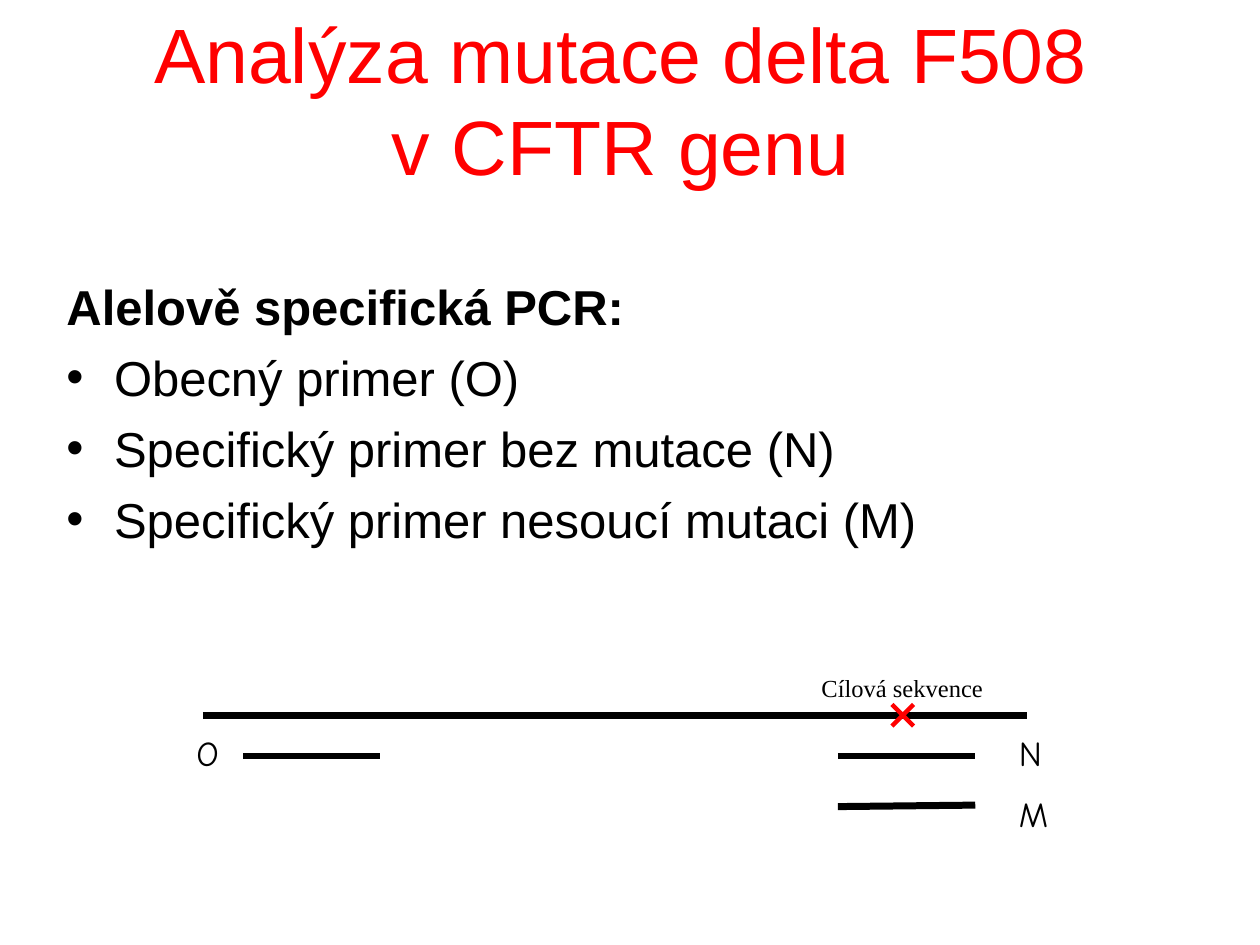
from lxml.etree import SubElement
from pptx import Presentation
from pptx.dml.color import RGBColor
from pptx.enum.shapes import MSO_CONNECTOR as Connector, MSO_SHAPE as Shape
from pptx.enum.text import MSO_ANCHOR as Anchor, MSO_AUTO_SIZE as AutoSize, PP_ALIGN as Align
from pptx.oxml.ns import qn
from pptx.util import Cm, Pt

BLACK = RGBColor(0, 0, 0)
RED = RGBColor(255, 0, 0)
MAIN_FONT = "Arial"
PRIMER_FONT = "Comic Neue"
LABEL_FONT = "Times New Roman"


class SlideBuilder:
    def __init__(self, page):
        self.page = page
        self.line_width = Pt(4)
        self.indent = Cm(0.96)
        self.paragraph_gap = Pt(7)

    def text_box(self, left, top, width, height, wrap=True):
        box = self.page.shapes.add_textbox(Cm(left), Cm(top), Cm(width), Cm(height))
        box.text_frame.word_wrap = wrap
        return box.text_frame

    def run(self, para, text, size, font=MAIN_FONT, color=BLACK, bold=False):
        span = para.add_run()
        span.text = text
        span.font.size = Pt(size)
        span.font.name = font
        span.font.bold = bold
        span.font.color.rgb = color

    def title(self, lines, *place):
        frame = self.text_box(*place)
        frame.vertical_anchor = Anchor.MIDDLE
        para = frame.paragraphs[0]
        para.alignment = Align.CENTER
        for index, line in enumerate(lines):
            if index:
                para.add_line_break()
            self.run(para, line, 44, color=RED)

    def bullet(self, para):
        properties = para._p.get_or_add_pPr()
        properties.set("marL", str(self.indent))
        properties.set("indent", str(-self.indent))
        SubElement(properties, qn("a:buFont")).set("typeface", MAIN_FONT)
        SubElement(properties, qn("a:buChar")).set("char", "•")

    def body(self, heading, items, *place):
        frame = self.text_box(*place)
        para = frame.paragraphs[0]
        para.space_before = self.paragraph_gap
        self.run(para, heading, 28, bold=True)
        for item in items:
            para = frame.add_paragraph()
            para.space_before = self.paragraph_gap
            self.bullet(para)
            self.run(para, item, 28)

    def label(self, text, size, font, *place, wrap=False):
        frame = self.text_box(*place, wrap=wrap)
        frame.auto_size = AutoSize.SHAPE_TO_FIT_TEXT
        self.run(frame.paragraphs[0], text, size, font)

    def strand(self, start, end, top, end_top=None):
        if end_top is None:
            end_top = top
        line = self.page.shapes.add_connector(
            Connector.STRAIGHT, Cm(start), Cm(top), Cm(end), Cm(end_top))
        line.line.color.rgb = BLACK
        line.line.width = self.line_width
        SubElement(line._element.spPr, qn("a:effectLst"))

    def cross(self, left, top, size):
        mark = self.page.shapes.add_shape(
            Shape.MATH_MULTIPLY, Cm(left), Cm(top), Cm(size), Cm(size))
        mark.adjustments[0] = 0.105
        mark.shadow.inherit = False
        mark.fill.solid()
        mark.fill.fore_color.rgb = RED
        mark.line.fill.background()


def main():
    deck = Presentation()
    deck.slide_width, deck.slide_height = Cm(25.4), Cm(19.05)
    builder = SlideBuilder(deck.slides.add_slide(deck.slide_layouts[6]))

    builder.title(["Analýza mutace delta F508", "v CFTR genu"], 1.09, 0.33, 22.86, 3.33)
    builder.body(
        "Alelově specifická PCR:",
        ["Obecný primer (O)",
         "Specifický primer bez mutace (N)",
         "Specifický primer nesoucí mutaci (M)"],
        1.09, 5.44, 22.86, 7.01)

    primer_length = 2.77
    common_left, specific_left = 4.9, 16.89
    specific_right = specific_left + primer_length
    builder.strand(4.09, 20.7, 14.43)
    builder.strand(common_left, common_left + primer_length, 15.24)
    builder.strand(specific_left, specific_right, 15.24)
    builder.strand(specific_left, specific_right, 16.26, 16.23)

    builder.label("Cílová sekvence", 14, LABEL_FONT, 16.31, 13.44, 3.81, 0.84)
    builder.label("O", 20, PRIMER_FONT, 3.71, 14.63, 1.07, 1.09)
    builder.label("N", 20, PRIMER_FONT, 20.29, 14.63, 1.5, 1.09, wrap=True)
    builder.label("M", 20, PRIMER_FONT, 20.29, 15.85, 1.12, 1.09)
    builder.cross(17.78, 14, 0.84)

    deck.save("out.pptx")


if __name__ == "__main__":
    main()
